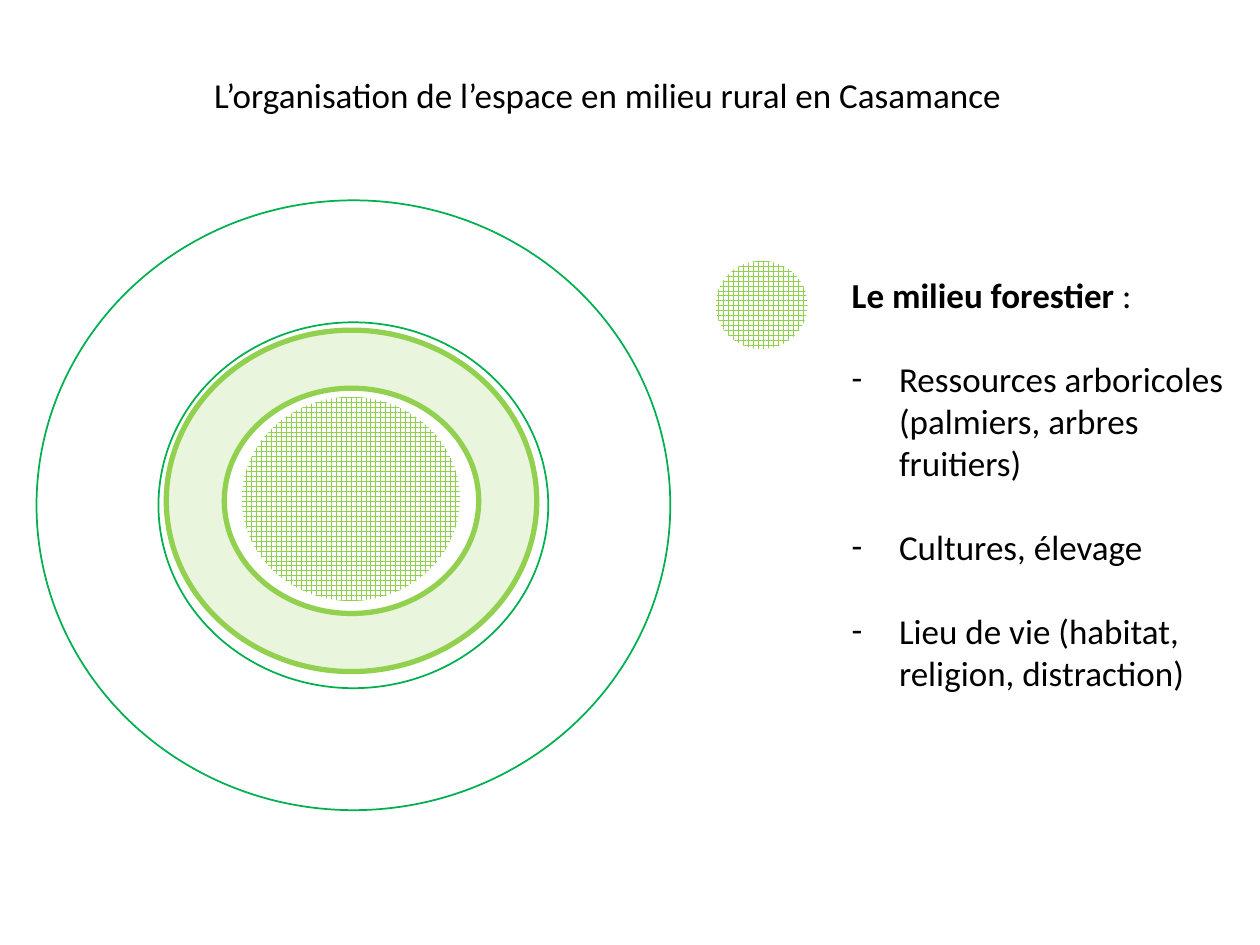
from dataclasses import dataclass

import pptx
import pptx.dml.color
import pptx.enum.dml
import pptx.enum.shapes
import pptx.enum.text
import pptx.oxml
import pptx.oxml.ns
import pptx.util

COLORS = {"text": "000000", "paper": "FFFFFF", "leaf": "92D050", "forest": "00B050"}
FONT = "Calibri"
TEXT_SIZE = pptx.util.Pt(20)
COLUMNS, ROWS = 100, 75
HANGING = 3.75  # columns

TITLE = "L’organisation de l’espace en milieu rural en Casamance"
HEADING = "Le milieu forestier "
USES = [
    "Ressources arboricoles (palmiers, arbres fruitiers)",
    "Cultures, élevage",
    "Lieu de vie (habitat, religion, distraction)",
]


@dataclass(frozen=True)
class Area:
    """A place on the slide, in grid columns and rows."""
    column: float
    row: float
    columns: float
    rows: float


@dataclass(frozen=True)
class Ring:
    area: Area
    thickness: float
    color: str
    line_width: float
    fill_opacity: int = 0  # percent


FOREST_DISCS = [Area(19.2, 31.5, 17.3, 16.2), Area(56.8, 20.7, 7.3, 7)]
RINGS = [
    Ring(Area(2.9, 15.9, 50.3, 48.4), 0.2, "forest", 1),
    Ring(Area(13.2, 26.2, 29.4, 27.1), 0.17, "leaf", 3, fill_opacity=20),
]

deck = pptx.Presentation()
deck.slide_width = pptx.util.Inches(10)
deck.slide_height = pptx.util.Inches(7.5)
CELL_WIDTH = deck.slide_width / COLUMNS
CELL_HEIGHT = deck.slide_height / ROWS


def rgb(name: str) -> pptx.dml.color.RGBColor:
    return pptx.dml.color.RGBColor.from_string(COLORS[name])


def bounds(area: Area) -> tuple[int, int, int, int]:
    return (round(area.column * CELL_WIDTH), round(area.row * CELL_HEIGHT),
            round(area.columns * CELL_WIDTH), round(area.rows * CELL_HEIGHT))


def add_child(parent, tag: str, **attributes: str) -> None:
    child = pptx.oxml.parse_xml(f"<{tag} {pptx.oxml.ns.nsdecls('a')}/>")
    for name, value in attributes.items():
        child.set(name, value)
    parent.append(child)


def place_text(placeholder, area: Area, wrap: bool):
    placeholder.left, placeholder.top, placeholder.width, placeholder.height = bounds(area)
    frame = placeholder.text_frame
    frame.word_wrap = wrap
    frame.auto_size = pptx.enum.text.MSO_AUTO_SIZE.SHAPE_TO_FIT_TEXT
    frame.vertical_anchor = pptx.enum.text.MSO_ANCHOR.TOP
    return frame


def style_paragraph(paragraph, space_before: float = 0) -> None:
    paragraph.alignment = pptx.enum.text.PP_ALIGN.LEFT
    paragraph.space_before = pptx.util.Pt(space_before)
    paragraph.font.name = FONT
    paragraph.font.size = TEXT_SIZE
    paragraph.font.color.rgb = rgb("text")


def set_bullet(paragraph, mark: str = "") -> None:
    """Hang the paragraph behind the mark, or drop the bullet if there is none."""
    properties = paragraph._p.get_or_add_pPr()
    indent = round(HANGING * CELL_WIDTH) if mark else 0
    properties.set("marL", str(indent))
    properties.set("indent", str(-indent))
    if mark:
        add_child(properties, "a:buFont", typeface=FONT)
        add_child(properties, "a:buChar", char=mark)
    else:
        add_child(properties, "a:buNone")


def add_forest_disc(slide, area: Area) -> None:
    disc = slide.shapes.add_shape(pptx.enum.shapes.MSO_SHAPE.OVAL, *bounds(area))
    disc.shadow.inherit = False
    disc.fill.patterned()
    disc.fill.pattern = pptx.enum.dml.MSO_PATTERN.LARGE_GRID
    disc.fill.fore_color.rgb = rgb("leaf")
    disc.fill.back_color.rgb = rgb("paper")
    disc.line.fill.background()


def add_ring(slide, ring: Ring) -> None:
    donut = slide.shapes.add_shape(pptx.enum.shapes.MSO_SHAPE.DONUT, *bounds(ring.area))
    donut.adjustments[0] = ring.thickness
    donut.shadow.inherit = False
    donut.line.color.rgb = rgb(ring.color)
    donut.line.width = pptx.util.Pt(ring.line_width)
    if ring.fill_opacity:
        donut.fill.solid()
        donut.fill.fore_color.rgb = rgb(ring.color)
        tint = donut._element.spPr.find(
            f"{pptx.oxml.ns.qn('a:solidFill')}/{pptx.oxml.ns.qn('a:srgbClr')}")
        add_child(tint, "a:alpha", val=str(ring.fill_opacity * 1000))
    else:
        donut.fill.background()


def main() -> None:
    slide = deck.slides.add_slide(deck.slide_layouts[1])

    title = place_text(slide.shapes.title, Area(16, 5.3, 65.8, 4.4), wrap=False)
    title.text = TITLE
    style_paragraph(title.paragraphs[0])

    legend = place_text(slide.placeholders[1], Area(66.6, 21.2, 32.1, 34.7), wrap=True)
    heading = legend.paragraphs[0]
    style_paragraph(heading)
    set_bullet(heading)
    name = heading.add_run()
    name.text = HEADING
    name.font.bold = True
    heading.add_run().text = ":"
    for use in USES:
        item = legend.add_paragraph()
        item.text = use
        style_paragraph(item, space_before=24)
        set_bullet(item, "-")

    for disc in FOREST_DISCS:
        add_forest_disc(slide, disc)
    for ring in RINGS:
        add_ring(slide, ring)

    deck.save("out.pptx")


if __name__ == "__main__":
    main()
